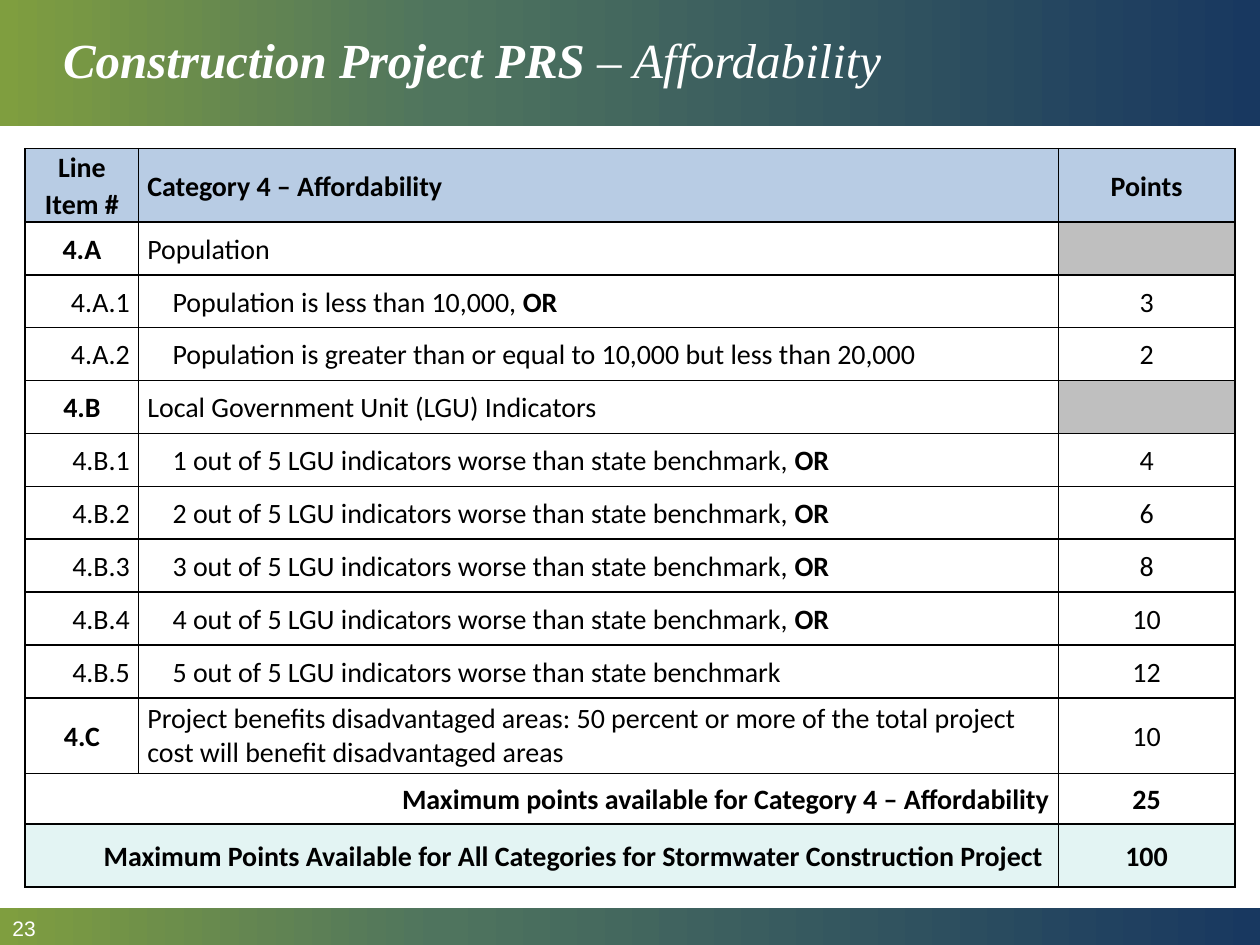
import copy

import lxml.etree
import pptx
import pptx.dml.color
import pptx.enum.shapes
import pptx.enum.text
import pptx.oxml.ns
import pptx.util

Inches = pptx.util.Inches
qn = pptx.oxml.ns.qn
ALIGN = pptx.enum.text.PP_ALIGN
MIDDLE = pptx.enum.text.MSO_ANCHOR.MIDDLE

THEME = {
    "gradient": [(0, "7F9E3F"), (0.35, "4F745E"), (1, "183860")],
    "white": "FFFFFF", "text": "000000", "border": "000000",
    "header": "B8CCE4", "blank": "BFBFBF", "total": "E3F4F3",
    "title_font": "Times New Roman", "table_font": "Calibri", "number_font": "Arial",
    "title_size": 28, "table_size": 16, "number_size": 12,
}

TITLE = [("Construction Project PRS", True), (" – Affordability", False)]
PAGE = "23"
HEADER = ("Line Item #", "Category 4 – Affordability", "Points")
OR = ("OR", True)
INDICATOR = "{} out of 5 LGU indicators worse than state benchmark"
# Kind, line item, description runs, points
ITEMS = [
    ("group", "4.A", [("Population", False)], None),
    ("item", "4.A.1", [("Population is less than 10,000, ", False), OR], "3"),
    ("item", "4.A.2", [("Population is greater than or equal to 10,000 "
                        "but less than 20,000", False)], "2"),
    ("group", "4.B", [("Local Government Unit (LGU) Indicators", False)], None),
    *[("item", f"4.B.{n}", [(INDICATOR.format(n) + ", ", False), OR], points)
      for n, points in enumerate(("4", "6", "8", "10"), 1)],
    ("item", "4.B.5", [(INDICATOR.format(5), False)], "12"),
    ("group", "4.C", [("Project benefits disadvantaged areas: 50 percent or more of the "
                       "total project cost will benefit disadvantaged areas", False)], "10"),
]
TOTALS = [
    ("Maximum points available for Category 4 – Affordability", "25", None),
    ("Maximum Points Available for All Categories for Stormwater Construction Project ",
     "100", THEME["total"]),
]
COLUMNS = [0.9, 7.3, 1.4]
ROWS = [0.52] + [0.42] * 9 + [0.6, 0.4, 0.5]


def rgb(value):
    return pptx.dml.color.RGBColor.from_string(value)


def write(tf, runs, font, size, color, align=ALIGN.LEFT, spacing=None, indent=0):
    """Fill the first paragraph with (text, bold) runs."""
    p = tf.paragraphs[0]
    p.alignment = align
    if spacing:
        p.line_spacing = spacing
    if indent:
        p._p.get_or_add_pPr().set("marL", str(Inches(indent)))
    for text, bold in runs:
        r = p.add_run()
        r.text = text
        r.font.name, r.font.size, r.font.bold = font, pptx.util.Pt(size), bold
        r.font.color.rgb = rgb(color)
    return p


def add_bar(s, top, height):
    bar = s.shapes.add_shape(pptx.enum.shapes.MSO_SHAPE.RECTANGLE,
                             0, Inches(top), Inches(10), Inches(height))
    bar.shadow.inherit = False
    bar.line.fill.background()
    bar.fill.gradient()
    bar.fill.gradient_angle = 0
    stops = bar._element.spPr.find(".//" + qn("a:gsLst"))
    stops.append(copy.deepcopy(stops[0]))
    for stop, (position, color) in zip(bar.fill.gradient_stops, THEME["gradient"]):
        stop.position = position
        stop.color.rgb = rgb(color)


def style_cell(cell, fill):
    cell.vertical_anchor = MIDDLE
    cell.margin_left = cell.margin_right = Inches(0.07)
    cell.margin_top = cell.margin_bottom = 0
    if fill:
        cell.fill.solid()
        cell.fill.fore_color.rgb = rgb(fill)
    else:
        cell.fill.background()
    tcPr = cell._tc.get_or_add_tcPr()
    for i, side in enumerate(("a:lnL", "a:lnR", "a:lnT", "a:lnB")):
        ln = lxml.etree.Element(qn(side), w=str(pptx.util.Pt(1)))
        solid = lxml.etree.SubElement(ln, qn("a:solidFill"))
        lxml.etree.SubElement(solid, qn("a:srgbClr"), val=THEME["border"])
        tcPr.insert(i, ln)


def fill_cell(cell, runs, fill=None, align=ALIGN.CENTER, spacing=1.07, indent=0):
    style_cell(cell, fill)
    write(cell.text_frame, runs, THEME["table_font"], THEME["table_size"], THEME["text"],
          align=align, spacing=spacing, indent=indent)


def add_score_table(s):
    table = s.shapes.add_table(len(ROWS), len(COLUMNS), Inches(0.2), Inches(1.18),
                               Inches(sum(COLUMNS)), Inches(sum(ROWS))).table
    table.first_row = table.horz_banding = False
    for column, width in zip(table.columns, COLUMNS):
        column.width = Inches(width)
    for row, height in zip(table.rows, ROWS):
        row.height = Inches(height)

    for i, text in enumerate(HEADER):
        fill_cell(table.cell(0, i), [(text, True)], THEME["header"],
                  ALIGN.LEFT if i == 1 else ALIGN.CENTER)

    for i, (kind, number, description, points) in enumerate(ITEMS, 1):
        group = kind == "group"
        fill_cell(table.cell(i, 0), [(number, group)],
                  align=ALIGN.CENTER if group else ALIGN.RIGHT)
        fill_cell(table.cell(i, 1), description, align=ALIGN.LEFT,
                  spacing=1.0 if number == "4.C" else 1.07, indent=0 if group else 0.2)
        if points:
            fill_cell(table.cell(i, 2), [(points, False)])
        else:
            style_cell(table.cell(i, 2), THEME["blank"])

    for i, (label, points, fill) in enumerate(TOTALS, 1 + len(ITEMS)):
        table.cell(i, 0).merge(table.cell(i, 1))
        style_cell(table.cell(i, 1), fill)
        fill_cell(table.cell(i, 0), [(label, True)], fill, ALIGN.RIGHT)
        fill_cell(table.cell(i, 2), [(points, True)], fill)


def main():
    prs = pptx.Presentation()
    prs.slide_width, prs.slide_height = Inches(10), Inches(7.5)
    s = prs.slides.add_slide(prs.slide_layouts[5])
    add_bar(s, 0, 1)
    add_bar(s, 7.21, 0.3)

    title = s.shapes.title
    s.shapes._spTree.append(title._element)  # in front of the bars
    title.left, title.top = Inches(0.4), 0
    title.width, title.height = Inches(9.19), Inches(1)
    title.text_frame.auto_size = pptx.enum.text.MSO_AUTO_SIZE.NONE
    title.text_frame.vertical_anchor = MIDDLE
    p = write(title.text_frame, TITLE, THEME["title_font"], THEME["title_size"],
              THEME["white"], spacing=0.9)
    for r in p.runs:
        r.font.italic = True

    add_score_table(s)

    number = s.shapes.add_textbox(0, Inches(7.22), Inches(1.91), Inches(0.29))
    number.text_frame.word_wrap = True
    number.text_frame.vertical_anchor = MIDDLE
    write(number.text_frame, [(PAGE, False)], THEME["number_font"],
          THEME["number_size"], THEME["white"])
    prs.save("out.pptx")


if __name__ == "__main__":
    main()
